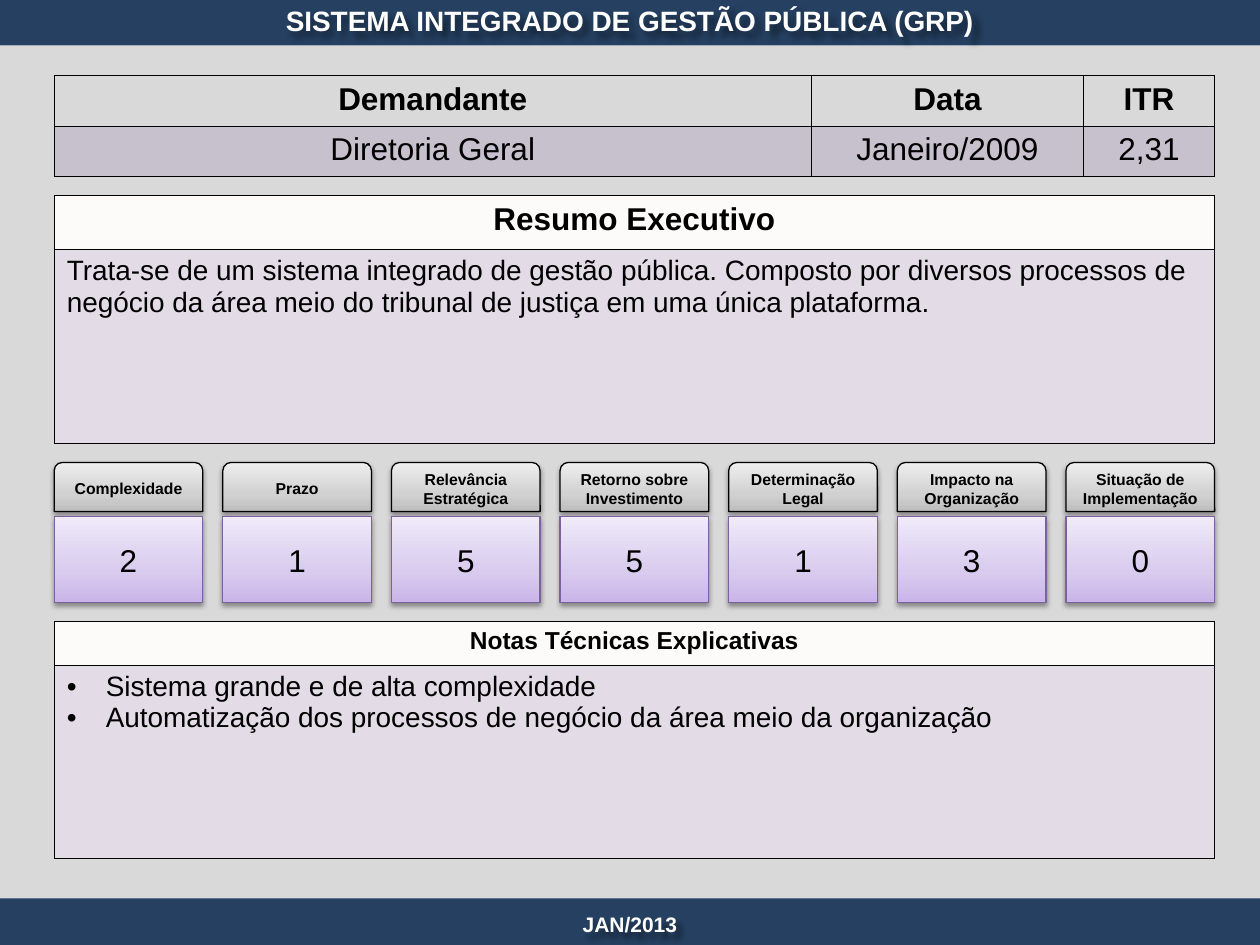
import copy

import pptx
import pptx.dml.color
import pptx.enum.shapes
import pptx.enum.text
import pptx.oxml
import pptx.oxml.ns
import pptx.util

Inches, Pt = pptx.util.Inches, pptx.util.Pt
SHAPES = pptx.enum.shapes.MSO_SHAPE
ALIGN = pptx.enum.text.PP_ALIGN
MIDDLE = pptx.enum.text.MSO_ANCHOR.MIDDLE
qn = pptx.oxml.ns.qn

COLORS = {
    "navy": "254061", "gray": "D9D9D9", "paper": "FCFBF9", "purple": "8064A2",
    "outline": "7D60A0", "black": "000000", "white": "FFFFFF",
}
LABEL_GRADIENT = ["BDBDBD", "D1D1D1", "EEEEEE"]
SCORE_GRADIENT = ["C9B5E8", "D8CBEE", "F0EAF9"]
GRADIENT_STOPS = [0, 0.35, 1]

TITLE = "SISTEMA INTEGRADO DE GESTÃO PÚBLICA (GRP)"
FOOTER = "JAN/2013"
REQUEST = [["Demandante", "Data", "ITR"], ["Diretoria Geral", "Janeiro/2009", "2,31"]]
SUMMARY_TITLE = "Resumo Executivo"
SUMMARY = [
    "Trata-se de um sistema integrado de gestão pública. Composto por diversos "
    "processos de negócio da área meio do tribunal de justiça em uma única plataforma."
]
SCORES = [
    ("Complexidade", "2"), ("Prazo", "1"), ("Relevância Estratégica", "5"),
    ("Retorno sobre Investimento", "5"), ("Determinação Legal", "1"),
    ("Impacto na Organização", "3"), ("Situação de Implementação", "0"),
]
NOTES_TITLE = "Notas Técnicas Explicativas"
NOTES = [
    "Sistema grande e de alta complexidade",
    "Automatização dos processos de negócio da área meio da organização",
]

WIDTH, HEIGHT = 10, 7.5
LEFT, CONTENT_WIDTH = 0.43, 9.21
BAR_HEIGHT = 0.37
CARD_WIDTH = 1.18
CARD_STEP = (CONTENT_WIDTH - CARD_WIDTH) / (len(SCORES) - 1)


def rgb(name):
    return pptx.dml.color.RGBColor.from_string(COLORS.get(name, name))


def a_element(tag, content="", **attributes):
    """Make a DrawingML element, with optional inner XML."""
    listed = "".join(f' {key}="{value}"' for key, value in attributes.items())
    namespace = pptx.oxml.ns.nsdecls("a")
    return pptx.oxml.parse_xml(f"<a:{tag} {namespace}{listed}>{content}</a:{tag}>")


def write(text_frame, lines, size, color="black", bold=False, align=ALIGN.CENTER, bullet=False):
    text_frame.text = "\n".join(lines)
    text_frame.word_wrap = True
    for paragraph in text_frame.paragraphs:
        if bullet:
            properties = paragraph._p.get_or_add_pPr()
            properties.set("marL", str(Inches(0.31)))
            properties.set("indent", str(-Inches(0.31)))
            properties.append(a_element("buFont", typeface="Arial"))
            properties.append(a_element("buChar", char="•"))
        paragraph.alignment = align
        for run in paragraph.runs:
            run.font.name = "Arial"
            run.font.size = Pt(size)
            run.font.bold = bold
            run.font.color.rgb = rgb(color)


def add_shadow(shape, blur, distance, angle, opacity):
    shape.shadow.inherit = False
    color = f'<a:srgbClr val="{COLORS["black"]}"><a:alpha val="{opacity * 1000}"/></a:srgbClr>'
    shape._element.spPr.find(qn("a:effectLst")).append(
        a_element("outerShdw", color, blurRad=Pt(blur), dist=Pt(distance),
                  dir=angle * 60000, rotWithShape=0))


def add_panel(slide, left, top, width, height, color):
    panel = slide.shapes.add_shape(
        SHAPES.RECTANGLE, Inches(left), Inches(top), Inches(width), Inches(height))
    panel.shadow.inherit = False
    panel.fill.solid()
    panel.fill.fore_color.rgb = rgb(color)
    panel.line.fill.background()


def add_card(slide, kind, left, top, height, gradient, line, text, size, bold):
    card = slide.shapes.add_shape(
        kind, Inches(left), Inches(top), Inches(CARD_WIDTH), Inches(height))
    card.fill.gradient()
    card.fill.gradient_angle = 90
    stops = card._element.spPr.find(".//" + qn("a:gsLst"))
    stops.append(copy.deepcopy(stops[-1]))
    for stop, position, color in zip(card.fill.gradient_stops, GRADIENT_STOPS, gradient):
        stop.position = position
        stop.color.rgb = rgb(color)
    card.line.color.rgb = rgb(line)
    card.line.width = Pt(0.75)
    add_shadow(card, 3.1, 1.6, 90, 38)
    card.text_frame.vertical_anchor = MIDDLE
    write(card.text_frame, [text], size, bold=bold)


def add_grid(slide, top, columns, rows):
    """Add a black-ruled table: a clear first row over a pale purple second row."""
    frame = slide.shapes.add_table(
        len(rows), len(columns), Inches(LEFT), Inches(top),
        Inches(sum(columns)), Inches(sum(rows)))
    table = frame.table
    table.first_row = table.horz_banding = False
    for column, width in zip(table.columns, columns):
        column.width = Inches(width)
    for row, height in zip(table.rows, rows):
        row.height = Inches(height)
    ink = f'<a:solidFill><a:srgbClr val="{COLORS["black"]}"/></a:solidFill>'
    for index, row in enumerate(table.rows):
        for cell in row.cells:
            properties = cell._tc.get_or_add_tcPr()
            for side in ("lnL", "lnR", "lnT", "lnB"):
                properties.append(a_element(side, ink, w=Pt(0.25)))
            if index == 0:
                cell.fill.background()
            else:
                cell.fill.solid()
                cell.fill.fore_color.rgb = rgb("purple")
                tint = properties.find(qn("a:solidFill") + "/" + qn("a:srgbClr"))
                tint.append(a_element("alpha", val=20000))
    return table


def add_section(slide, top, rows, title, title_size, lines, bullet=False):
    add_panel(slide, LEFT, top, CONTENT_WIDTH, sum(rows), "paper")
    table = add_grid(slide, top, [CONTENT_WIDTH], rows)
    write(table.cell(0, 0).text_frame, [title], title_size, bold=True)
    write(table.cell(1, 0).text_frame, lines, 16, align=ALIGN.LEFT, bullet=bullet)


def add_banner_text(shape, top, height, text, size):
    shape.left, shape.top = 0, Inches(top)
    shape.width, shape.height = Inches(WIDTH), Inches(height)
    shape.fill.background()
    add_shadow(shape, 3, 3, 45, 43)
    shape.text_frame.vertical_anchor = MIDDLE
    write(shape.text_frame, [text], size, "white", bold=True)


def main():
    presentation = pptx.Presentation()
    presentation.slide_width, presentation.slide_height = Inches(WIDTH), Inches(HEIGHT)
    slide = presentation.slides.add_slide(presentation.slide_layouts[5])

    add_panel(slide, 0, 0.36, WIDTH, 6.85, "gray")
    for top in (HEIGHT - BAR_HEIGHT, -0.01):
        add_panel(slide, 0, top, WIDTH, BAR_HEIGHT, "navy")
    add_banner_text(slide.shapes.add_textbox(0, 0, 0, 0), 7.14, 0.39, FOOTER, 12)
    title = slide.shapes.title
    slide.shapes._spTree.append(title._element)
    add_banner_text(title, -0.11, 0.55, TITLE, 16)

    request = add_grid(slide, 0.6, [6.01, 2.16, 1.04], [0.4, 0.4])
    for row, texts in enumerate(REQUEST):
        for column, text in enumerate(texts):
            write(request.cell(row, column).text_frame, [text], 18, bold=row == 0)

    add_section(slide, 1.55, [0.43, 1.54], SUMMARY_TITLE, 18, SUMMARY)
    add_section(slide, 4.93, [0.35, 1.53], NOTES_TITLE, 14, NOTES, bullet=True)

    for index, (label, score) in enumerate(SCORES):
        left = LEFT + index * CARD_STEP
        add_card(slide, SHAPES.ROUND_2_SAME_RECTANGLE, left, 3.67, 0.39,
                 LABEL_GRADIENT, "black", label, 9, True)
        add_card(slide, SHAPES.RECTANGLE, left, 4.1, 0.68,
                 SCORE_GRADIENT, "outline", score, 18, False)

    presentation.save("out.pptx")


if __name__ == "__main__":
    main()
